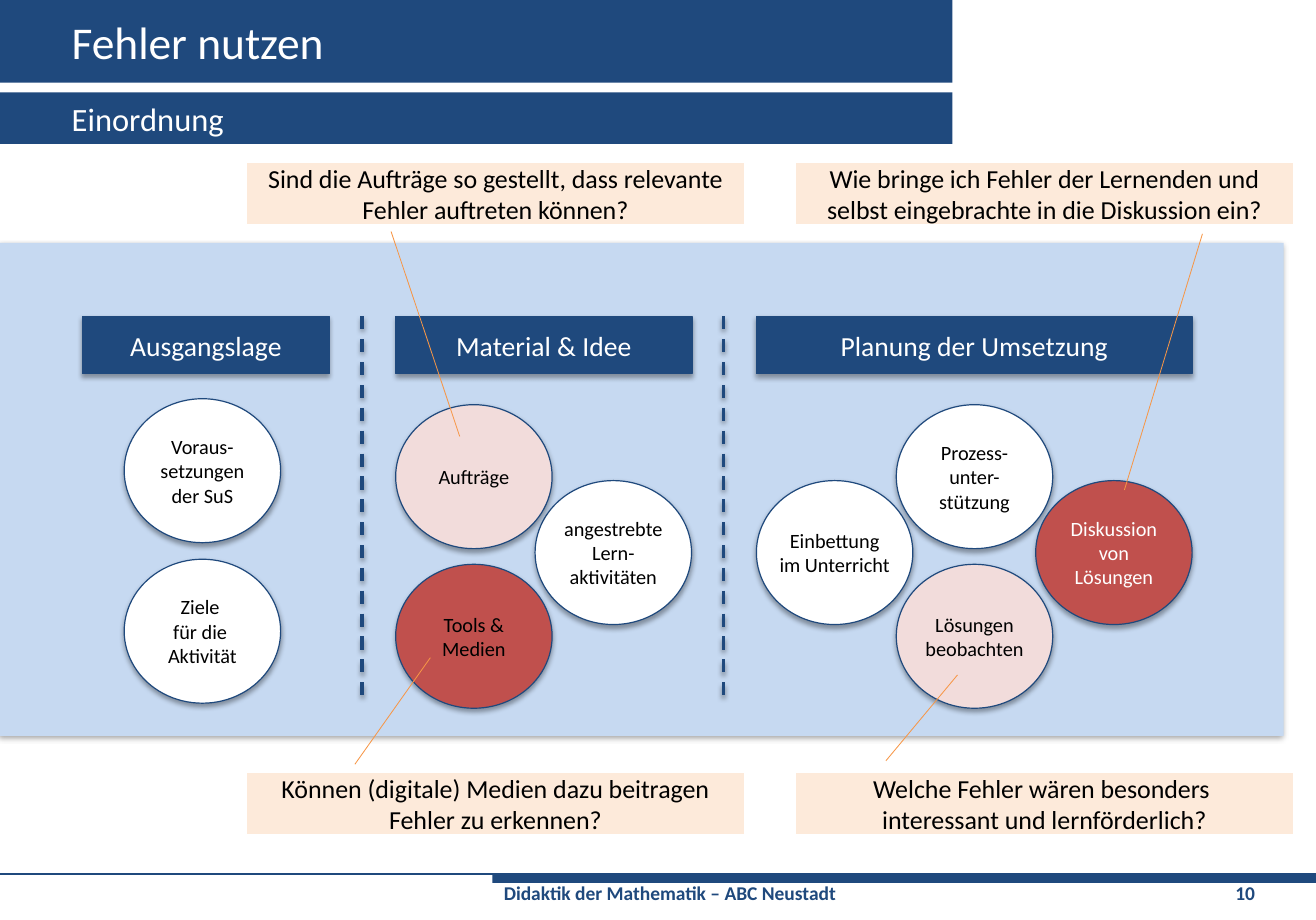
import pptx
import pptx.util
import pptx.dml.color
import pptx.enum.dml
import pptx.enum.shapes
import pptx.enum.text
import pptx.oxml
import pptx.oxml.ns
from lxml import etree

Cm = pptx.util.Cm
Pt = pptx.util.Pt
Kind = pptx.enum.shapes.MSO_SHAPE
Align = pptx.enum.text.PP_ALIGN
Anchor = pptx.enum.text.MSO_ANCHOR
qn = pptx.oxml.ns.qn

HUES = {
    "navy": "1F497D", "sky": "C6D9F1", "white": "FFFFFF", "black": "000000",
    "red": "C0504D", "rose": "F2DCDB", "peach": "FDEADA", "orange": "F79646",
}
WIDE, HIGH = Pt(810.75), Pt(567)
DISC = (3.4, 3.13)

COLUMNS = [
    ((1.79, 6.88, 5.37, 1.25), "Ausgangslage", [
        (0.91, 5.28, "white", "black", "Ziele \vfür die \vAktivität"),
        (0.91, 1.79, "white", "black", "Voraus-setzungen\nder SuS"),
    ]),
    ((8.6, 6.88, 6.44, 1.25), "Material & Idee", [
        (3.03, 3.57, "white", "black", "angestrebte\vLern-aktivitäten"),
        (0, 5.39, "red", "black", "Tools & Medien"),
        (0, 1.92, "rose", "black", "Aufträge"),
    ]),
    ((16.44, 6.88, 9.47, 1.25), "Planung der Umsetzung", [
        (0, 3.57, "white", "black", "Einbettung\nim Unterricht"),
        (3.04, 1.92, "white", "black", "Prozess-\vunter-stützung"),
        (6.07, 3.57, "red", "white", "Diskussion von Lösungen"),
        (3.04, 5.39, "rose", "black", "Lösungen beobachten"),
    ]),
]
LEFT, RIGHT = 5.37, 17.3
TOP, LOW = 3.55, 16.81
NOTES = [
    (LEFT, TOP, (1.126, 0.29, 4.5, 0.428),
     "Sind die Aufträge so gestellt, dass relevante Fehler auftreten können?"),
    (LEFT, LOW, (-0.145, 0.217, -1.903, 0.369),
     "Können (digitale) Medien dazu beitragen Fehler zu erkennen?"),
    (RIGHT, LOW, (-0.203, 0.181, -1.617, 0.325),
     "Welche Fehler wären besonders \vinteressant und lernförderlich?"),
    (RIGHT, TOP, (1.163, 0.818, 5.382, 0.661),
     "Wie bringe ich Fehler der Lernenden und selbst eingebrachte in die Diskussion ein?"),
]


def tint(name):
    return pptx.dml.color.RGBColor.from_string(HUES[name])


def write(shape, text, size, hue, align=Align.CENTER, anchor=Anchor.MIDDLE, bold=False):
    frame = shape.text_frame
    frame.word_wrap = True
    frame.vertical_anchor = anchor
    frame.text = text
    for par in frame.paragraphs:
        par.alignment = align
        par.font.name = "Calibri"
        par.font.size = Pt(size)
        par.font.bold = bold
        par.font.color.rgb = tint(hue)


def shade(shape, alpha=35, dist=1.8):
    props = shape._element.spPr
    effect = props.find(qn("a:effectLst"))
    if effect is None:
        effect = etree.SubElement(props, qn("a:effectLst"))
    cast = etree.SubElement(
        effect, qn("a:outerShdw"), blurRad=str(Pt(3.1)), dist=str(Pt(dist)),
        dir="5400000", rotWithShape="0")
    base = etree.SubElement(cast, qn("a:srgbClr"), val=HUES["black"])
    etree.SubElement(base, qn("a:alpha"), val=str(alpha * 1000))


def form(slide, kind, box, fill, edge=None, width=0.75):
    shape = slide.shapes.add_shape(kind, *map(Cm, box))
    shape.fill.solid()
    shape.fill.fore_color.rgb = tint(fill)
    if edge:
        shape.line.color.rgb = tint(edge)
        shape.line.width = Pt(width)
    else:
        shape.line.fill.background()
    shape.shadow.inherit = False
    return shape


def rule(slide, start, end, width):
    line = slide.shapes.add_connector(
        pptx.enum.shapes.MSO_CONNECTOR.STRAIGHT, *map(Cm, start + end))
    line.line.color.rgb = tint("navy")
    line.line.width = Pt(width)
    etree.SubElement(line._element.spPr, qn("a:effectLst"))
    return line


def banner(slide, box, text, size):
    x, y, w, h = box
    form(slide, Kind.RECTANGLE, box, "navy")
    label = slide.shapes.add_textbox(Cm(x + 1.31), Cm(y), Cm(w - 1.5), Cm(h))
    write(label, text, size, "white", Align.LEFT)


def footer(slide, box):
    x, y, w, h = box
    rule(slide, (0, y), (x + w, y), 1)
    form(slide, Kind.RECTANGLE, (x, y, w, 0.2), "navy")
    label = slide.shapes.add_textbox(Cm(x), Cm(y + 0.03), Cm(w), Cm(h))
    write(label, "Didaktik der Mathematik – ABC Neustadt\t10", 12, "navy",
          Align.LEFT, Anchor.TOP, True)
    props = label.text_frame.paragraphs[0]._p.get_or_add_pPr()
    tabs = pptx.oxml.parse_xml(
        f'<a:tabLst {pptx.oxml.ns.nsdecls("a")}>'
        f'<a:tab pos="{Cm(w - 2)}" algn="l"/></a:tabLst>')
    props.insert_element_before(tabs, "a:defRPr", "a:extLst")


def column(slide, box, title, discs):
    x, y, w, h = box
    head = form(slide, Kind.RECTANGLE, box, "navy", "navy")
    shade(head)
    write(head, title, 17, "white")
    for dx, dy, fill, ink, text in discs:
        disc = form(slide, Kind.OVAL, (x + dx, y + dy) + DISC, fill, "navy")
        shade(disc)
        frame = disc.text_frame
        frame.margin_left = frame.margin_right = 0
        frame.margin_top = frame.margin_bottom = 0
        write(disc, text, 12.5, ink)


def divide(slide, x, y, h):
    line = rule(slide, (x, y), (x, y + h), 2)
    line.line.dash_style = pptx.enum.dml.MSO_LINE.DASH
    shade(line, 38, 1.6)


def note(slide, box, bends, text):
    call = form(slide, Kind.LINE_CALLOUT_1_NO_BORDER, box, "peach", "orange", 0.5)
    for index, bend in enumerate(bends):
        call.adjustments[index] = bend
    write(call, text, 16, "black")


def main():
    deck = pptx.Presentation()
    deck.slide_width, deck.slide_height = WIDE, HIGH
    slide = deck.slides.add_slide(deck.slide_layouts[6])
    banner(slide, (0, 0, 20.7, 1.8), "Fehler nutzen", 28)
    banner(slide, (0, 2.01, 20.7, 1.12), "Einordnung", 20)
    footer(slide, (10.7, 19, 17.9, 0.78))
    shade(form(slide, Kind.RECTANGLE, (0, 5.28, 27.9, 10.72), "sky"))
    for box, title, discs in COLUMNS:
        column(slide, box, title, discs)
    for x in (7.87, 15.72):
        divide(slide, x, 6.88, 8.41)
    for x, y, bends, text in NOTES:
        note(slide, (x, y, 10.8, 1.32), bends, text)
    deck.save("out.pptx")


if __name__ == "__main__":
    main()
